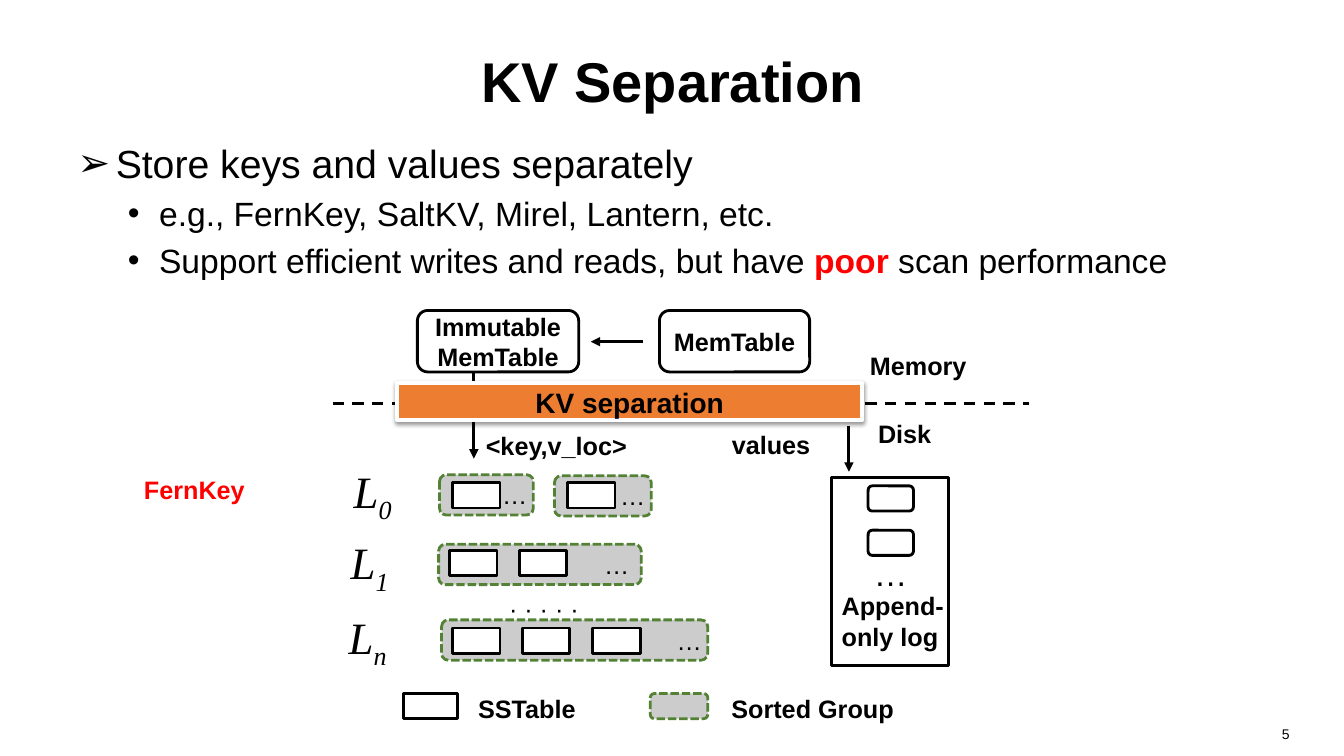
from dataclasses import dataclass
from lxml.etree import SubElement
from pptx import Presentation
from pptx.dml.color import RGBColor
from pptx.enum.dml import MSO_LINE
from pptx.enum.shapes import MSO_CONNECTOR, MSO_SHAPE
from pptx.enum.text import MSO_ANCHOR, PP_ALIGN
from pptx.oxml import parse_xml
from pptx.oxml.ns import nsdecls, qn
from pptx.util import Inches, Pt


@dataclass(frozen=True)
class Theme:
    ink: str = "000000"
    paper: str = "FFFFFF"
    red: str = "FF0000"
    orange: str = "ED7D31"
    gray: str = "CCCCCC"
    green: str = "548235"
    sans: str = "Arial"
    serif: str = "Times New Roman"
    title: int = 40
    level: int = 32
    lead: int = 28
    sub: int = 24
    bar: int = 20
    label: int = 18
    page: int = 10


T = Theme()
LEFT, MID, RIGHT = PP_ALIGN.LEFT, PP_ALIGN.CENTER, PP_ALIGN.RIGHT
RECT, ROUND = MSO_SHAPE.RECTANGLE, MSO_SHAPE.ROUNDED_RECTANGLE

# Content: lengths in inches
TITLE = "KV Separation"
# runs (text, stressed), bullet, indent, hang, size, space before
BULLETS = [
    ([("Store keys and values separately", False)], "➢", 0.38, 0.38, T.lead, 0),
    ([("e.g., FernKey, SaltKV, Mirel, Lantern, etc.", False)], "•", 0.81, 0.31, T.sub, 4.8),
    ([("Support efficient writes and reads, but have ", False), ("poor", True),
      (" scan performance", False)], "•", 0.81, 0.31, T.sub, 4.8),
]
MEMORY = [("Immutable\nMemTable", 4.14, 1.6), ("MemTable", 6.54, 1.49)]
ARROWS = [(6.38, 3.39, 5.86, 3.39), (4.7, 3.69, 4.7, 4.55), (8.42, 4.23, 8.42, 4.68)]
# left, top, width, right inset, table lefts, table top
GROUPS = [
    (4.36, 4.71, 0.93, 0.04, [4.49], 4.79),
    (5.5, 4.72, 0.96, 0.04, [5.63], 4.79),
    (4.35, 5.4, 2.01, 0.1, [4.46, 5.15], 5.46),
    (4.38, 6.15, 2.64, 0.04, [4.49, 5.18, 5.88], 6.23),
]
LEVELS = [("0", 3.41, 4.55), ("1", 3.38, 5.26), ("n", 3.36, 6)]
# text, left, top, width, alignment, colour
LABELS = [
    ("Memory", 8.53, 3.43, 1.36, LEFT, T.ink),
    ("Disk", 8.61, 4.1, 1.08, LEFT, T.ink),
    ("<key,v_loc>", 4.72, 4.22, 1.83, LEFT, T.ink),
    ("values", 7.16, 4.21, 1.26, LEFT, T.ink),
    ("FernKey", 1.33, 4.66, 2, LEFT, T.red),
    ("Append-\nonly log", 8.25, 5.81, 2.83, LEFT, T.ink),
    ("SSTable", 4.35, 6.83, 1.75, MID, T.ink),
    ("Sorted Group", 6.61, 6.83, 2.9, MID, T.ink),
]

deck = Presentation()
deck.slide_width, deck.slide_height = Inches(13.33), Inches(7.5)
slide = deck.slides.add_slide(deck.slide_layouts[6])
shapes = slide.shapes


def color(code):
    return RGBColor.from_string(code)


def style(font, size, bold=False, hue=T.ink, face=T.sans):
    font.size, font.bold, font.name = Pt(size), bold, face
    font.color.rgb = color(hue)


def write(shape, text, size, align=LEFT, bold=False, hue=T.ink,
          anchor=MSO_ANCHOR.TOP, inset=0.1):
    frame = shape.text_frame
    frame.word_wrap, frame.vertical_anchor = True, anchor
    frame.margin_left = frame.margin_right = Inches(inset)
    frame.text = text
    for para in frame.paragraphs:
        para.alignment = align
        style(para.font, size, bold, hue)
    return frame


def label(text, x, y, w, h, size, **look):
    return write(shapes.add_textbox(*map(Inches, (x, y, w, h))), text, size, **look)


def box(kind, x, y, w, h, fill=T.paper, edge=T.ink, width=2):
    shape = shapes.add_shape(kind, *map(Inches, (x, y, w, h)))
    shape.shadow.inherit = False
    if fill:
        shape.fill.solid()
        shape.fill.fore_color.rgb = color(fill)
    else:
        shape.fill.background()
    shape.line.color.rgb = color(edge)
    shape.line.width = Pt(width)
    return shape


def group(x, y, w, h):
    shape = box(ROUND, x, y, w, h, T.gray, T.green)
    shape.line.dash_style = MSO_LINE.SQUARE_DOT
    return shape


def link(ends, width):
    line = shapes.add_connector(MSO_CONNECTOR.STRAIGHT, *map(Inches, ends))
    line.line.color.rgb = color(T.ink)
    line.line.width = Pt(width)
    SubElement(line._element.spPr, qn("a:effectLst"))
    return line.line


# Title, bullets and page number
label(TITLE, 0.67, 0.17, 12, 1.25, T.title, align=MID, bold=True, anchor=MSO_ANCHOR.MIDDLE)
body = label("", 0.67, 1.33, 12, 1.67, T.lead)
for i, (runs, mark, indent, hang, size, gap) in enumerate(BULLETS):
    para = body.add_paragraph() if i else body.paragraphs[0]
    style(para.font, size)
    para.space_before = Pt(gap)
    props = para._p.get_or_add_pPr()
    props.set("marL", str(Inches(indent)))
    props.set("indent", str(-Inches(hang)))
    rest = props.find(qn("a:defRPr"))
    for part in (f'buFont {nsdecls("a")} typeface="{T.sans}"',
                 f'buChar {nsdecls("a")} char="{mark}"'):
        rest.addprevious(parse_xml(f"<a:{part}/>"))
    for text, stress in runs:
        run = para.add_run()
        run.text = text
        if stress:
            style(run.font, size, True, T.red)
label("5", 9.78, 7.15, 3.11, 0.35, T.page, align=RIGHT)

# Memory tables, arrows and the memory/disk border
for text, x, w in MEMORY:
    write(box(ROUND, x, 3.08, w, 0.61), text, T.label, MID, True,
          anchor=MSO_ANCHOR.MIDDLE, inset=0.05)
link((3.3, 4, 10.21, 4), 2).dash_style = MSO_LINE.DASH
for ends in ARROWS:
    SubElement(link(ends, 2.25)._get_or_add_ln(), qn("a:tailEnd")).set("type", "triangle")

# KV separation bar
bar = box(RECT, 3.94, 3.8, 4.61, 0.37, T.orange, T.paper, 3)
frame = write(bar, "KV separation", T.bar, MID, True, anchor=MSO_ANCHOR.MIDDLE)
frame.margin_top = Inches(0.1)
frame.paragraphs[0].line_spacing = Pt(20.6)
bar._element.spPr.find(qn("a:effectLst")).append(parse_xml(
    f'<a:outerShdw {nsdecls("a")} blurRad="{Pt(3.1)}" dist="{Pt(1.6)}" dir="5400000">'
    f'<a:srgbClr val="{T.ink}"><a:alpha val="38000"/></a:srgbClr></a:outerShdw>'))

# Sorted groups and their tables
for x, y, w, inset, lefts, top in GROUPS:
    write(group(x, y, w, 0.4), "…", T.label, RIGHT, anchor=MSO_ANCHOR.MIDDLE, inset=inset)
    for left in lefts:
        box(RECT, left, top, 0.47, 0.25)
label("· · · · ·", 4.95, 5.84, 0.91, 0.4, T.label)

# Level names
for name, x, y in LEVELS:
    para = label("L", x, y, 0.8, 0.64, T.level).paragraphs[0]
    style(para.font, T.level, face=T.serif)
    para.font.italic = True
    run = para.add_run()
    run.text = name
    run._r.get_or_add_rPr().set("baseline", "-25000")

# Append-only log
box(RECT, 8.25, 4.74, 1.16, 1.86, None)
for y in (4.82, 5.26):
    box(ROUND, 8.61, y, 0.45, 0.25)
label("…", 8.57, 5.44, 0.46, 0.5, T.sub)

# Legend and labels
box(RECT, 4, 6.88, 0.54, 0.25)
group(6.45, 6.88, 0.57, 0.25)
for text, x, y, w, align, hue in LABELS:
    label(text, x, y, w, 0.4 + 0.31 * text.count("\n"), T.label,
          align=align, bold=True, hue=hue)

deck.save("out.pptx")
